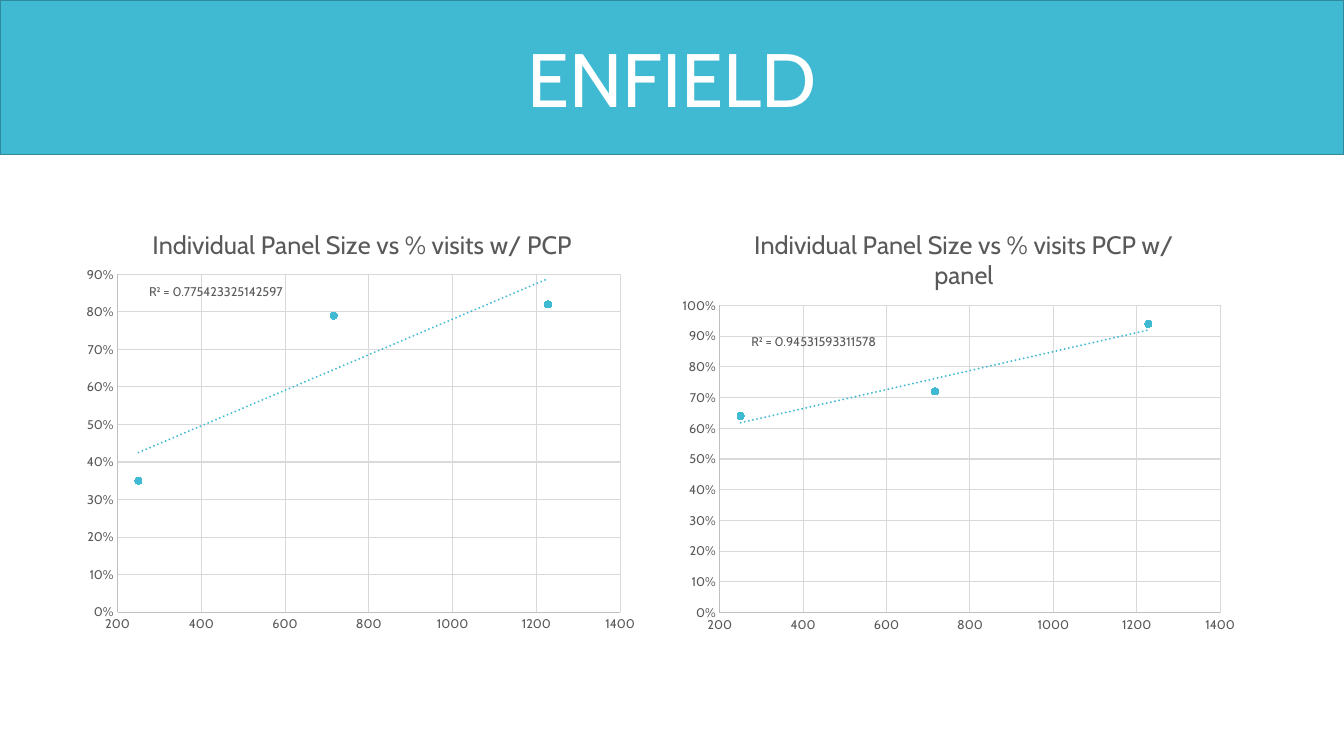
from dataclasses import dataclass

from lxml import etree
from pptx import Presentation
from pptx import util as u
from pptx.chart import data as chart_data
from pptx.dml.color import RGBColor
from pptx.enum import chart as charts
from pptx.enum import shapes, text
from pptx.oxml import parse_xml
from pptx.oxml.ns import nsdecls, qn

WIDTH = u.Inches(13.33)
HEIGHT = u.Inches(7.5)
FONT = "Cabin"
COLORS = {
    "accent": "40BAD2",
    "banner_line": "2F8A9B",
    "white": "FFFFFF",
    "text": "595959",
    "axis": "BFBFBF",
    "grid": "D9D9D9",
}
BANNER_HEIGHT = 0.204
CHART_TOP = 0.268
CHART_HEIGHT = 0.579
LABEL_WIDTH = 0.14
LABEL_HEIGHT = 0.03
PANEL_SIZES = (1228, 250, 716)


@dataclass(frozen=True)
class ScatterPanel:
    title: str
    left: float
    width: float
    visits: tuple[float, ...]
    maximum: float
    plot: tuple[float, float, float, float]
    title_at: tuple[float, float]
    fit: str
    fit_at: tuple[float, float]


PANELS = (
    ScatterPanel(
        "Individual Panel Size vs % visits w/ PCP", 0.056, 0.425,
        (0.82, 0.35, 0.79), 0.9,
        (0.074, 0.164, 0.88, 0.772), (0.127, 0.046),
        "R² = 0.775423325142597", (0.111, 0.371),
    ),
    ScatterPanel(
        "Individual Panel Size vs % visits PCP w/ panel", 0.5, 0.428,
        (0.94, 0.64, 0.72), 1.0,
        (0.083, 0.235, 0.87, 0.702), (0.135, 0.046),
        "R² = 0.94531593311578", (0.559, 0.437),
    ),
)


def color(name: str) -> RGBColor:
    return RGBColor.from_string(COLORS[name])


def style_font(font, size: float, name: str) -> None:
    font.name = FONT
    font.size = u.Pt(size)
    font.bold = False
    font.color.rgb = color(name)


def style_line(line, name: str, width: float) -> None:
    line.color.rgb = color(name)
    line.width = u.Pt(width)


def add_text(paragraph, content: str, size: float, name: str) -> None:
    run = paragraph.add_run()
    run.text = content
    style_font(run.font, size, name)


def layout_xml(position: tuple[float, ...], inner: bool = False) -> str:
    target = '<c:layoutTarget val="inner"/>' if inner else ""
    sizes = "".join(
        f'<c:{key} val="{value}"/>' for key, value in zip("xywh", position)
    )
    return (
        f"<c:layout {nsdecls('c')}><c:manualLayout>{target}"
        f'<c:xMode val="edge"/><c:yMode val="edge"/>{sizes}'
        "</c:manualLayout></c:layout>"
    )


def place(parent: etree.ElementBase, index: int, xml: str) -> None:
    for layout in parent.findall(qn("c:layout")):
        parent.remove(layout)
    parent.insert(index, parse_xml(xml))


def trendline_xml() -> str:
    return f"""<c:trendline {nsdecls('c', 'a')}>
      <c:spPr><a:ln w="19050" cap="rnd">
        <a:solidFill><a:srgbClr val="{COLORS['accent']}"/></a:solidFill>
        <a:prstDash val="sysDot"/></a:ln></c:spPr>
      <c:trendlineType val="linear"/>
      <c:dispRSqr val="0"/><c:dispEq val="0"/></c:trendline>"""


def style_axis(axis, low: float, high: float, step: float, number: str) -> None:
    axis.minimum_scale = low
    axis.maximum_scale = high
    axis.major_unit = step
    axis.major_tick_mark = charts.XL_TICK_MARK.NONE
    axis.minor_tick_mark = charts.XL_TICK_MARK.NONE
    axis.has_major_gridlines = True
    style_line(axis.major_gridlines.format.line, "grid", 0.75)
    style_line(axis.format.line, "axis", 0.75)
    style_font(axis.tick_labels.font, 9, "text")
    axis.tick_labels.number_format = number
    axis.tick_labels.number_format_is_linked = False


def style_series(series) -> None:
    series.format.line.fill.background()
    marker = series.marker
    marker.style = charts.XL_MARKER_STYLE.CIRCLE
    marker.size = 5
    marker.format.fill.solid()
    marker.format.fill.fore_color.rgb = color("accent")
    style_line(marker.format.line, "accent", 0.75)
    values = series._element.find(qn("c:xVal"))
    values.addprevious(parse_xml(trendline_xml()))


def add_banner(slide, caption: str) -> None:
    banner = slide.shapes.add_shape(
        shapes.MSO_SHAPE.RECTANGLE, 0, 0, WIDTH, int(HEIGHT * BANNER_HEIGHT)
    )
    banner.shadow.inherit = False
    banner.fill.solid()
    banner.fill.fore_color.rgb = color("accent")
    style_line(banner.line, "banner_line", 0.85)
    frame = banner.text_frame
    frame.word_wrap = True
    frame.vertical_anchor = text.MSO_ANCHOR.MIDDLE
    paragraph = frame.paragraphs[0]
    paragraph.alignment = text.PP_ALIGN.CENTER
    add_text(paragraph, caption, 54, "white")


def add_fit_label(slide, panel: ScatterPanel) -> None:
    left, top = panel.fit_at
    frame = slide.shapes.add_textbox(
        int(WIDTH * left), int(HEIGHT * top),
        int(WIDTH * LABEL_WIDTH), int(HEIGHT * LABEL_HEIGHT),
    ).text_frame
    frame.word_wrap = True
    frame.vertical_anchor = text.MSO_ANCHOR.MIDDLE
    frame.margin_left = frame.margin_right = 0
    frame.margin_top = frame.margin_bottom = 0
    add_text(frame.paragraphs[0], panel.fit, 9, "text")


def add_panel(slide, panel: ScatterPanel) -> None:
    data = chart_data.XyChartData()
    points = data.add_series("Series 1")
    for size, share in zip(PANEL_SIZES, panel.visits):
        points.add_data_point(size, share)
    chart = slide.shapes.add_chart(
        charts.XL_CHART_TYPE.XY_SCATTER,
        int(WIDTH * panel.left), int(HEIGHT * CHART_TOP),
        int(WIDTH * panel.width), int(HEIGHT * CHART_HEIGHT), data,
    ).chart
    chart.has_legend = False
    style_font(chart.font, 10, "text")
    chart.plots[0].vary_by_categories = False

    title = chart.chart_title
    add_text(title.text_frame.paragraphs[0], panel.title, 18, "text")
    title.include_in_layout = False
    place(title._element, 1, layout_xml(panel.title_at))
    plot_area = chart._chartSpace.chart.plotArea
    place(plot_area, 0, layout_xml(panel.plot, inner=True))

    style_axis(chart.category_axis, 200, 1400, 200, "General")
    style_axis(chart.value_axis, 0, panel.maximum, 0.1, "0%")
    style_series(chart.plots[0].series[0])


def main() -> None:
    presentation = Presentation()
    presentation.slide_width = WIDTH
    presentation.slide_height = HEIGHT
    slide = presentation.slides.add_slide(presentation.slide_layouts[6])
    add_banner(slide, "ENFIELD")
    for panel in PANELS:
        add_panel(slide, panel)
        add_fit_label(slide, panel)
    presentation.save("out.pptx")


if __name__ == "__main__":
    main()
